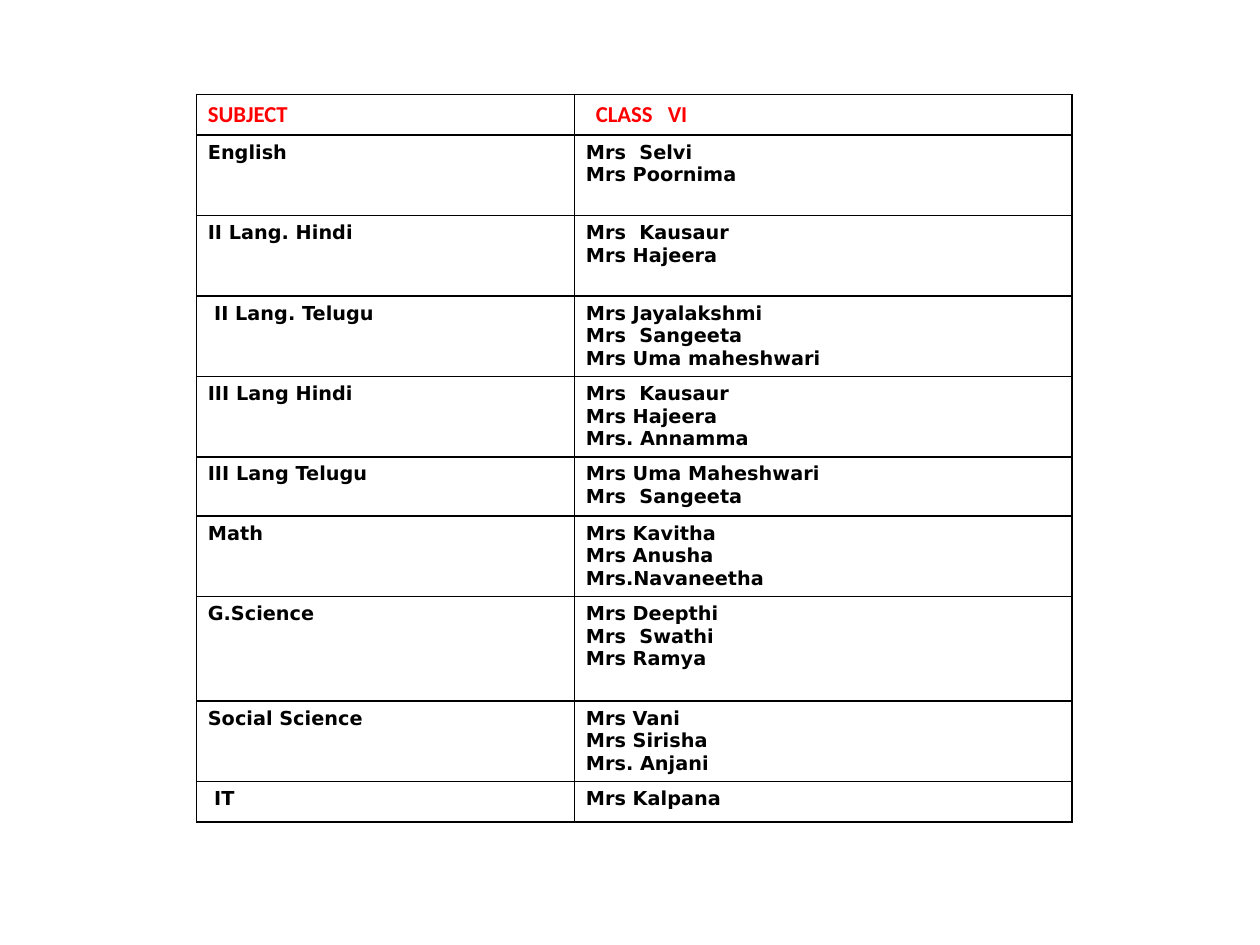
from dataclasses import dataclass

from lxml import etree
from pptx import Presentation
from pptx.dml.color import RGBColor
from pptx.oxml.ns import qn
from pptx.util import Inches, Pt


@dataclass(frozen=True)
class Theme:
    header_color: RGBColor = RGBColor(0xFF, 0x00, 0x00)
    body_color: RGBColor = RGBColor(0x00, 0x00, 0x00)
    border: str = "000000"
    border_width: int = Pt(1)
    header_font: str = "Calibri"
    body_font: str = "DejaVu Sans"
    header_size: int = Pt(13)
    body_size: int = Pt(11)


THEME = Theme()
MARGIN_X, MARGIN_Y = 0.09, 0.05
COL_WIDTHS = (3, 3.95)
HEADER = ("SUBJECT", "CLASS\tVI")
HEADER_HEIGHT = 0.32
HEADER_INDENT = 0.08
HEADER_TAB = 0.57

# Subject, extra indent, row height, teachers
SUBJECTS = [
    ("English", 0, 0.64, ["Mrs  Selvi", "Mrs Poornima"]),
    ("II Lang. Hindi", 0, 0.64, ["Mrs  Kausaur", "Mrs Hajeera"]),
    ("II Lang. Telugu", 0.05, 0.64,
     ["Mrs Jayalakshmi", "Mrs  Sangeeta", "Mrs Uma maheshwari"]),
    ("III Lang Hindi", 0, 0.63, ["Mrs  Kausaur", "Mrs Hajeera", "Mrs. Annamma"]),
    ("III Lang Telugu", 0, 0.47, ["Mrs Uma Maheshwari", "Mrs  Sangeeta"]),
    ("Math", 0, 0.64, ["Mrs Kavitha", "Mrs Anusha", "Mrs.Navaneetha"]),
    ("G.Science", 0, 0.83, ["Mrs Deepthi", "Mrs  Swathi", "Mrs Ramya"]),
    ("Social Science", 0, 0.64, ["Mrs Vani", "Mrs Sirisha", "Mrs. Anjani"]),
    ("IT", 0.05, 0.32, ["Mrs Kalpana"]),
]


def set_borders(cell):
    tc_pr = cell._tc.get_or_add_tcPr()
    for i, side in enumerate(("lnL", "lnR", "lnT", "lnB")):
        ln = etree.Element(qn(f"a:{side}"), w=str(THEME.border_width))
        fill = etree.SubElement(ln, qn("a:solidFill"))
        etree.SubElement(fill, qn("a:srgbClr"), val=THEME.border)
        tc_pr.insert(i, ln)


def add_tab_stop(p, pos):
    tabs = etree.SubElement(p._p.get_or_add_pPr(), qn("a:tabLst"))
    etree.SubElement(tabs, qn("a:tab"), pos=str(pos), algn="l")


def fill_cell(cell, text, font, size, color, indent=0):
    cell.margin_left = Inches(MARGIN_X + indent)
    cell.margin_right = Inches(MARGIN_X)
    cell.margin_top = cell.margin_bottom = Inches(MARGIN_Y)
    cell.fill.background()
    set_borders(cell)
    cell.text_frame.text = text
    for p in cell.text_frame.paragraphs:
        for r in p.runs:
            r.font.name = font
            r.font.size = size
            r.font.bold = True
            r.font.color.rgb = color


def add_teacher_table(slide, left, top, width, height):
    table = slide.shapes.add_table(
        len(SUBJECTS) + 1, len(COL_WIDTHS), left, top, width, height).table
    table.horz_banding = False
    for col, col_width in zip(table.columns, COL_WIDTHS):
        col.width = Inches(col_width)

    # Header row
    table.rows[0].height = Inches(HEADER_HEIGHT)
    for i, (text, indent) in enumerate(zip(HEADER, (0, HEADER_INDENT))):
        fill_cell(table.cell(0, i), text, THEME.header_font,
                  THEME.header_size, THEME.header_color, indent)
    add_tab_stop(table.cell(0, 1).text_frame.paragraphs[0], Inches(HEADER_TAB))

    # Subject rows
    body = (THEME.body_font, THEME.body_size, THEME.body_color)
    for i, (subject, indent, row_height, teachers) in enumerate(SUBJECTS, 1):
        table.rows[i].height = Inches(row_height)
        fill_cell(table.cell(i, 0), subject, *body, indent)
        fill_cell(table.cell(i, 1), "\n".join(teachers), *body)


def main():
    prs = Presentation()
    prs.slide_width, prs.slide_height = Inches(10), Inches(7.5)
    slide = prs.slides.add_slide(prs.slide_layouts[6])
    height = HEADER_HEIGHT + sum(row[2] for row in SUBJECTS)
    add_teacher_table(slide, Inches(1.56), Inches(0.75),
                      Inches(sum(COL_WIDTHS)), Inches(height))
    prs.save("out.pptx")


if __name__ == "__main__":
    main()
